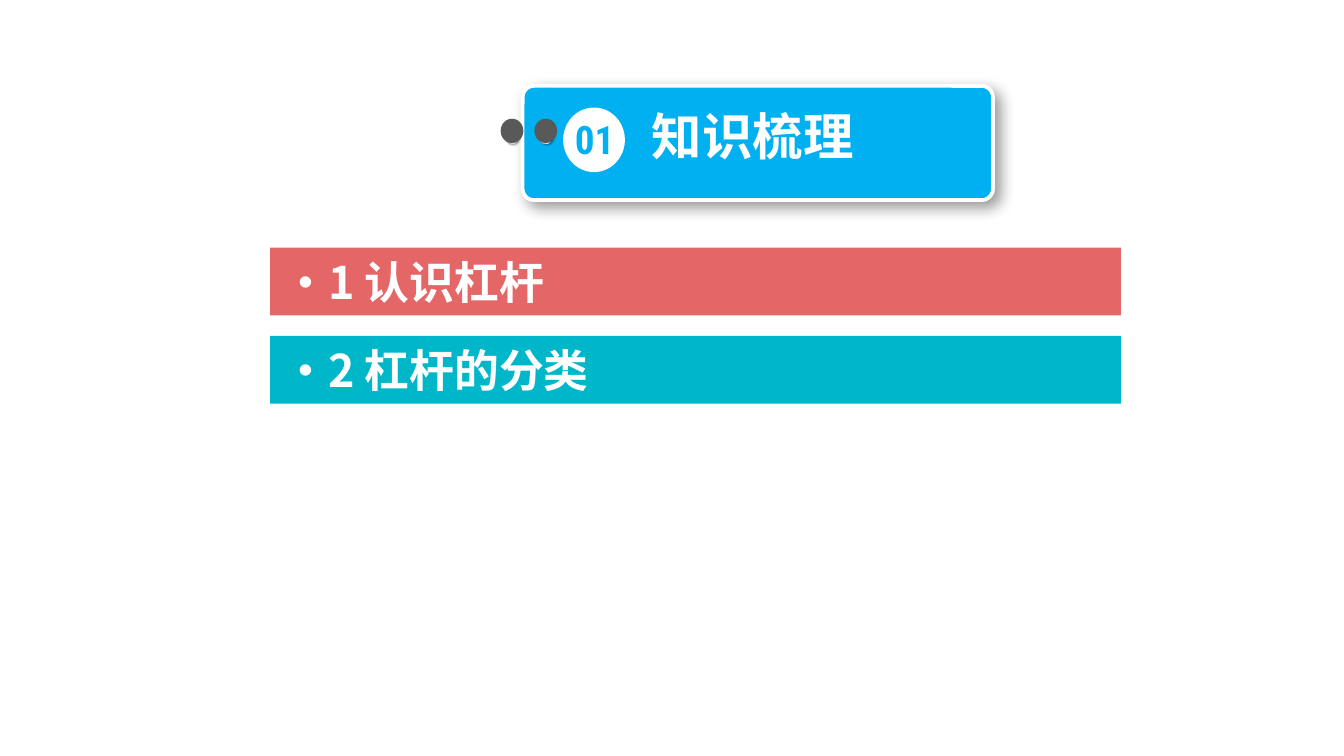
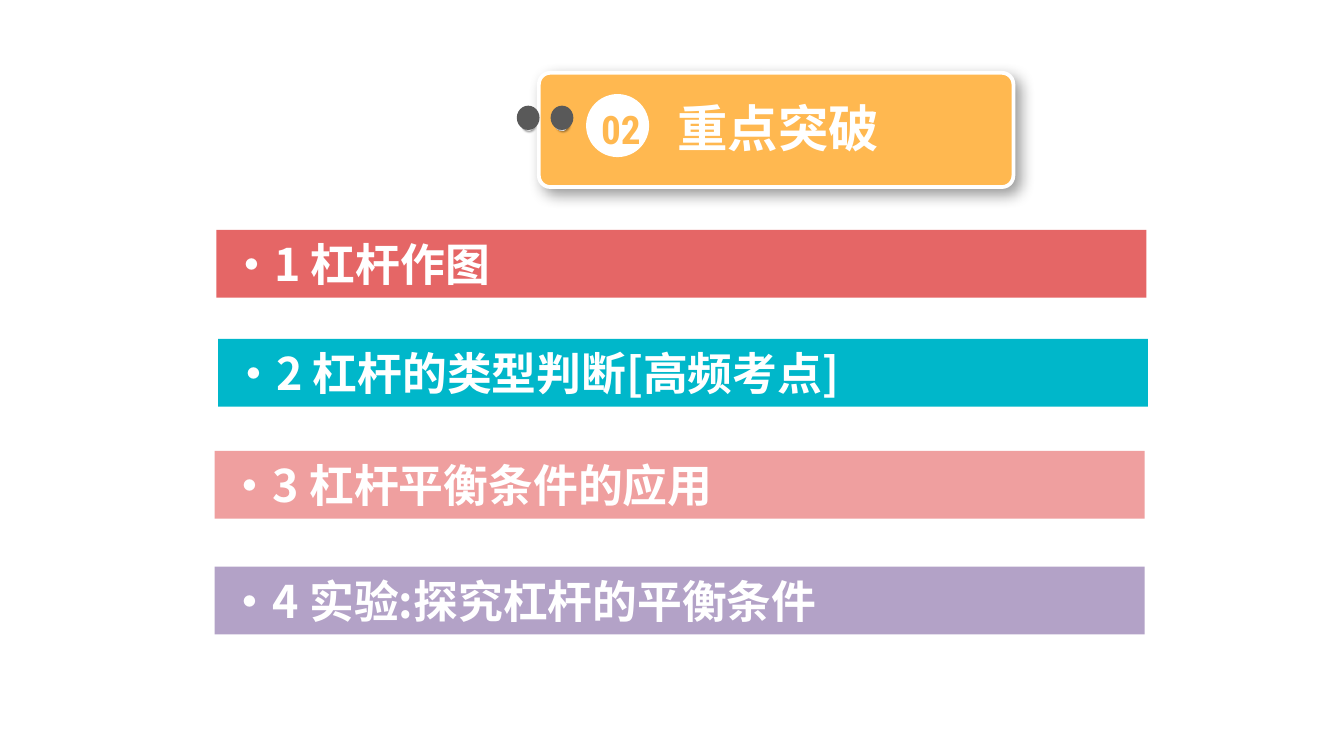
"""Build two lever section slides, each with a pinned title plate and topic bars."""
from dataclasses import dataclass

from pptx import Presentation
from pptx import oxml
from pptx import util as u
from pptx.dml.color import RGBColor
from pptx.enum import shapes, text
from pptx.oxml.ns import nsdecls, qn


@dataclass(frozen=True)
class Theme:
    white: str = "FFFFFF"
    blue: str = "00B0F0"
    orange: str = "FFB850"
    red: str = "E56666"
    teal: str = "00B7CA"
    pink: str = "EF9F9F"
    purple: str = "B3A2C7"
    pin: str = "595959"
    shadow: str = "000000"
    metal: tuple = ((0, "FFFFFF"), (17, "A6A6A6"), (35, "F2F2F2"),
                    (55, "A6A6A6"), (75, "F2F2F2"), (100, "A6A6A6"))
    body_font: str = "Noto Sans CJK SC"
    number_font: str = "Roboto Condensed"
    heading_size: int = 27
    bar_size: int = 24
    number_size: int = 21


theme = Theme()
RECTANGLE = shapes.MSO_SHAPE.RECTANGLE
ROUNDED = shapes.MSO_SHAPE.ROUNDED_RECTANGLE
OVAL = shapes.MSO_SHAPE.OVAL


def draw(parent, kind, box, fill=None, shadow=None):
    """Add a borderless shape, with a (blur, distance) shadow if one is given."""
    shape = parent.shapes.add_shape(kind, *map(u.Pt, box))
    shape.line.fill.background()
    shape.shadow.inherit = False
    if fill:
        shape.fill.solid()
        shape.fill.fore_color.rgb = RGBColor.from_string(fill)
    if shadow:
        blur, distance = map(u.Pt, shadow)
        shape._element.spPr.find(qn("a:effectLst")).append(oxml.parse_xml(
            f'<a:outerShdw {nsdecls("a")} blurRad="{blur}" dist="{distance}" dir="2700000" '
            f'algn="tl" rotWithShape="0"><a:srgbClr val="{theme.shadow}">'
            '<a:alpha val="40000"/></a:srgbClr></a:outerShdw>'))
    return shape


def write(shape, words, size, color, font, align, wrap=True):
    """Put one bold line of text in a shape."""
    frame = shape.text_frame
    for name, value in {"word_wrap": wrap, "vertical_anchor": text.MSO_ANCHOR.MIDDLE,
                        "auto_size": text.MSO_AUTO_SIZE.NONE}.items():
        setattr(frame, name, value)
    paragraph = frame.paragraphs[0]
    paragraph.alignment = align
    run = paragraph.add_run()
    run.text = words
    for name, value in {"size": u.Pt(size), "bold": True, "name": font}.items():
        setattr(run.font, name, value)
    run.font.color.rgb = RGBColor.from_string(color)
    run._r.get_or_add_rPr().append(
        oxml.parse_xml(f'<a:ea {nsdecls("a")} typeface="{font}"/>'))


sections = [
    {
        "color": theme.blue,
        "plate": (280, 46, 252, 61.2),
        "badge": (301.7, 57.6, 33.1, 34.6),
        "number": ("01", (299.5, 58.3, 38.2, 32.4)),
        "heading": ("知识梳理", (323.3, 52.6, 159.8, 40.3)),
        "bar_width": 455.8,
        "bars": [
            ("·1 认识杠杆", 144.7, 132.7, theme.red),
            ("·2 杠杆的分类", 144.7, 180, theme.teal),
        ],
    },
    {
        "color": theme.orange,
        "plate": (288.7, 39, 254.2, 61.2),
        "badge": (314, 50.4, 33.8, 33.8),
        "number": ("02", (312.5, 52.6, 40.3, 32.4)),
        "heading": ("重点突破", (327.6, 48.2, 178.6, 40.3)),
        "bar_width": 498.2,
        "bars": [
            ("·1 杠杆作图", 115.9, 123.1, theme.red),
            ("·2 杠杆的类型判断[高频考点]", 116.8, 181.5, theme.teal),
            ("·3 杠杆平衡条件的应用", 115, 241.5, theme.pink),
            ("·4 实验:探究杠杆的平衡条件", 115, 303.6, theme.purple),
        ],
    },
]

metal_stops = "".join(
    f'<a:gs pos="{place * 1000}"><a:srgbClr val="{color}"/></a:gs>'
    for place, color in theme.metal)
metal_fill = (f'<a:gradFill {nsdecls("a")}><a:gsLst>{metal_stops}</a:gsLst>'
              '<a:lin ang="2700000" scaled="0"/></a:gradFill>')

presentation = Presentation()
presentation.slide_width = u.Pt(720)
presentation.slide_height = u.Pt(405)

for section in sections:
    slide = presentation.slides.add_slide(presentation.slide_layouts[6])
    title = slide.shapes.add_group_shape()

    plate = draw(title, ROUNDED, section["plate"], section["color"], (8, 4))
    plate.adjustments[0] = 0.1
    plate.line.color.rgb = RGBColor.from_string(theme.white)
    plate.line.width = u.Pt(2)

    left, top = section["plate"][:2]
    for offset in (6.3, -11.8):
        hole = draw(title, OVAL, (left + offset + 2.4, top + 23.8, 7.2, 7.2), shadow=(1, 1))
        hole.rotation = 270
        hole._element.spPr.find(qn("a:prstGeom")).addnext(oxml.parse_xml(metal_fill))
        draw(title, OVAL, (left + offset, top + 17.6, 12.2, 13), theme.pin)

    draw(title, OVAL, section["badge"], theme.white)
    for part, size, color, font, wrap in (
            ("number", theme.number_size, section["color"], theme.number_font, False),
            ("heading", theme.heading_size, theme.white, theme.body_font, True)):
        words, box = section[part]
        label = title.shapes.add_textbox(*map(u.Pt, box))
        write(label, words, size, color, font, text.PP_ALIGN.CENTER, wrap)

    for words, left, top, color in section["bars"]:
        bar = draw(slide, RECTANGLE, (left, top, section["bar_width"], 36.3), color)
        write(bar, words, theme.bar_size, theme.white, theme.body_font, text.PP_ALIGN.LEFT)

presentation.save("out.pptx")
